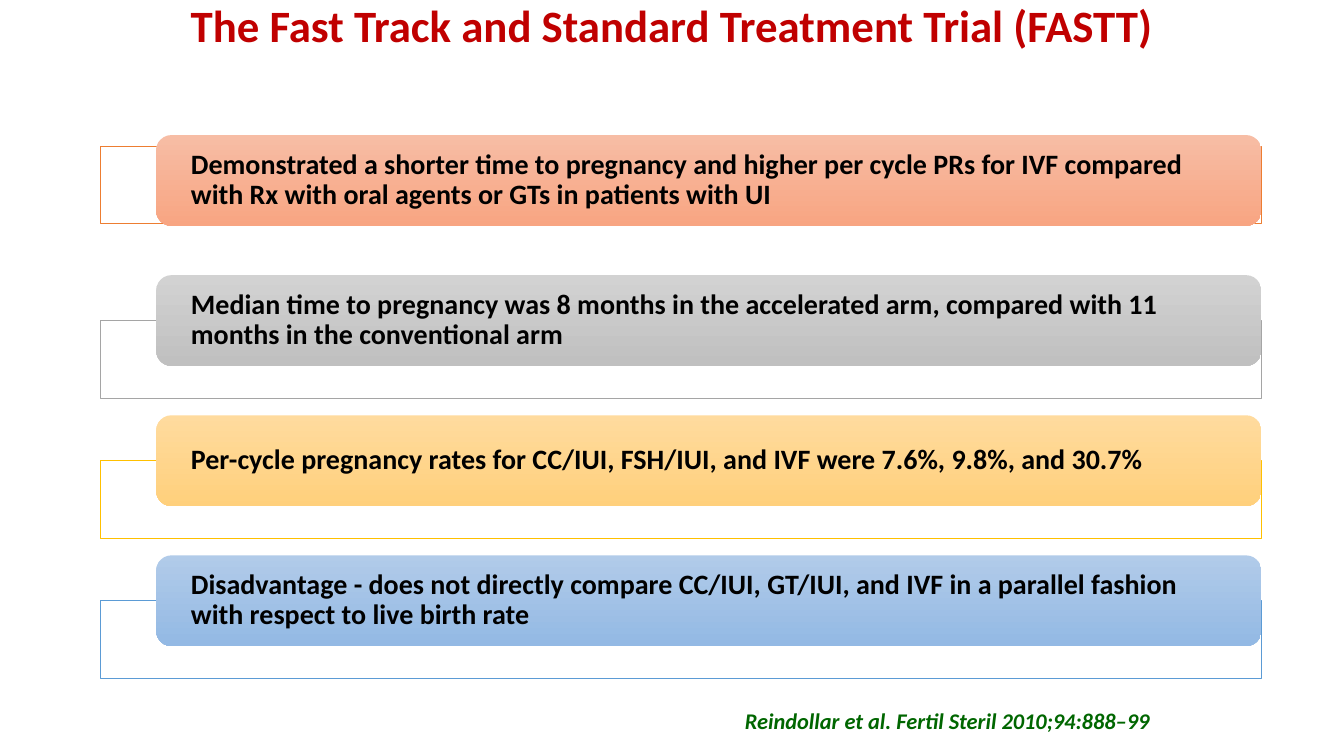
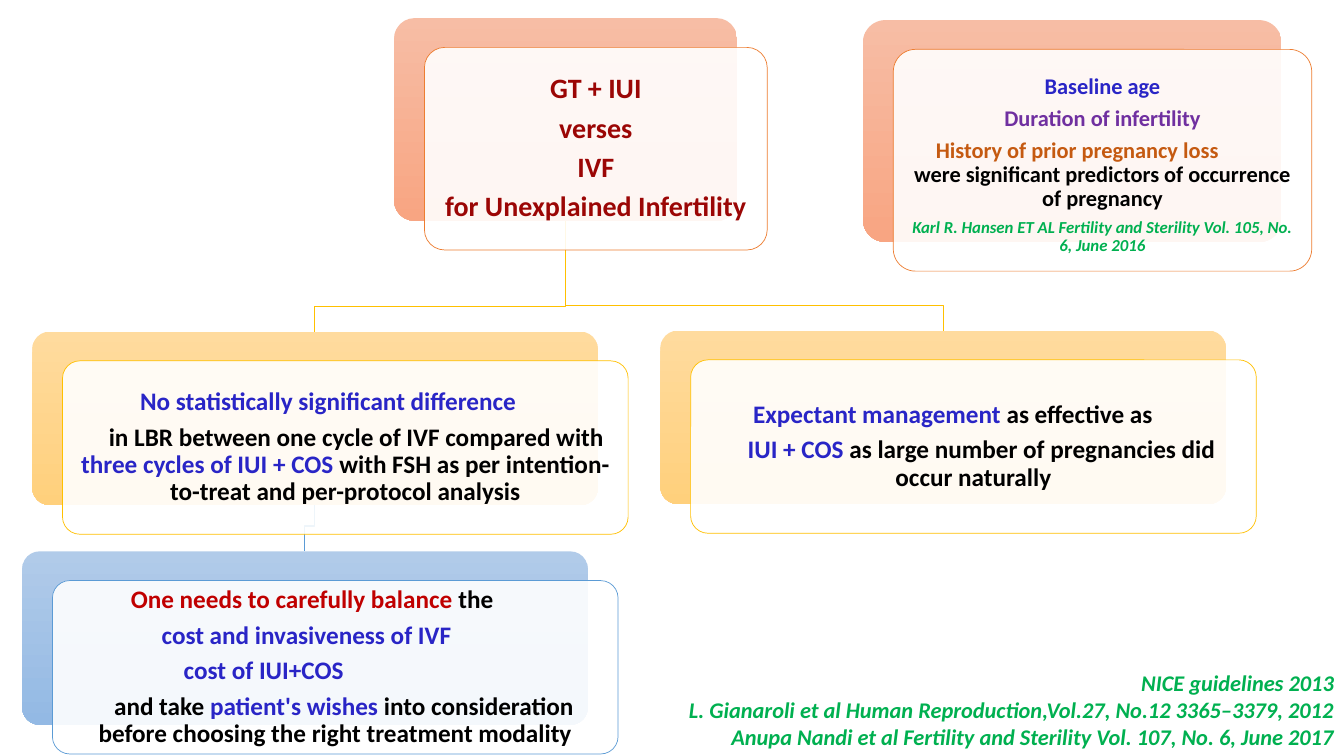
from lxml import etree
from pptx import Presentation
from pptx.dml.color import RGBColor
from pptx.enum.shapes import MSO_SHAPE
from pptx.enum.text import MSO_ANCHOR, PP_ALIGN
from pptx.oxml.ns import qn
from pptx.util import Inches, Pt

LEFT, CENTER, RIGHT = PP_ALIGN.LEFT, PP_ALIGN.CENTER, PP_ALIGN.RIGHT
MIDDLE = MSO_ANCHOR.MIDDLE
RECT, ROUNDED = MSO_SHAPE.RECTANGLE, MSO_SHAPE.ROUNDED_RECTANGLE

FONT = "Calibri"
BLACK = RGBColor(0x00, 0x00, 0x00)
WHITE = RGBColor(0xFF, 0xFF, 0xFF)
RED = RGBColor(0xC0, 0x00, 0x00)
DARK_RED = RGBColor(0x9B, 0x06, 0x05)
BLUE = RGBColor(0x29, 0x25, 0xC6)
PURPLE = RGBColor(0x70, 0x30, 0xA0)
BROWN = RGBColor(0xC5, 0x5A, 0x11)
GREEN = RGBColor(0x00, 0xB0, 0x50)
DARK_GREEN = RGBColor(0x00, 0x66, 0x00)

# Each theme: outline, gradient top, gradient bottom
ORANGE_THEME = (RGBColor(0xED, 0x7D, 0x31), RGBColor(0xF7, 0xBD, 0xA5), RGBColor(0xF8, 0xA5, 0x82))
GRAY_THEME = (RGBColor(0xA5, 0xA5, 0xA5), RGBColor(0xD2, 0xD2, 0xD2), RGBColor(0xC0, 0xC0, 0xC0))
GOLD_THEME = (RGBColor(0xFF, 0xC0, 0x00), RGBColor(0xFF, 0xDB, 0x9E), RGBColor(0xFF, 0xD0, 0x7C))
BLUE_THEME = (RGBColor(0x5B, 0x9B, 0xD5), RGBColor(0xB1, 0xCB, 0xE9), RGBColor(0x93, 0xB9, 0xE4))


def write(frame, *runs, size=18, align=CENTER, spacing=0.9, gap=0.33,
          italic=False, right=0, first=0):
    """Append a paragraph of (text, colour) runs; gap is a share of the size."""
    paragraph = frame.paragraphs[0]
    if paragraph.runs:
        paragraph = frame.add_paragraph()
        paragraph.space_before = Pt(round(size * gap, 1))
    paragraph.alignment = align
    paragraph.line_spacing = spacing
    properties = paragraph._p.get_or_add_pPr()
    properties.set("marR", str(Inches(right)))
    properties.set("indent", str(Inches(first)))
    for text, color in runs:
        run = paragraph.add_run()
        run.text = text
        run.font.name = FONT
        run.font.size = Pt(size)
        run.font.bold = True
        run.font.italic = italic
        run.font.color.rgb = color


def draw_panel(slide, kind, box, theme, filled):
    """Draw a gradient panel, or a nearly opaque white one with an outline."""
    panel = slide.shapes.add_shape(kind, *[Inches(length) for length in box])
    panel.shadow.inherit = False
    outline, top, bottom = theme
    if filled:
        panel.fill.gradient()
        panel.fill.gradient_angle = 270
        for stop, color in zip(panel.fill.gradient_stops, (top, bottom)):
            stop.color.rgb = color
        panel.line.fill.background()
    else:
        panel.fill.solid()
        panel.fill.fore_color.rgb = WHITE
        white = panel.element.spPr.find(qn("a:solidFill"))[0]
        etree.SubElement(white, qn("a:alpha"), val="90000")
        panel.line.color.rgb = outline
        panel.line.width = Pt(0.5)
    panel.text_frame.word_wrap = True
    panel.text_frame.vertical_anchor = MIDDLE
    return panel


deck = Presentation()
deck.slide_width, deck.slide_height = Inches(13.33), Inches(7.5)

# Slide 1: trial findings
findings_slide = deck.slides.add_slide(deck.slide_layouts[5])
title = findings_slide.shapes.title
title.left, title.top, title.width, title.height = Inches(0), Inches(0), Inches(13.33), Inches(0.56)
title.text_frame.vertical_anchor = MIDDLE
write(title.text_frame, ("The Fast Track and Standard Treatment Trial (FASTT)", RED), size=32)

findings = [
    (ORANGE_THEME, "Demonstrated a shorter time to pregnancy and higher per cycle PRs for IVF "
                   "compared with Rx with oral agents or GTs in patients with UI"),
    (GRAY_THEME, "Median time to pregnancy was 8 months in the accelerated arm, compared with 11 "
                 "months in the conventional arm"),
    (GOLD_THEME, "Per-cycle pregnancy rates for CC/IUI, FSH/IUI, and IVF were 7.6%, 9.8%, and 30.7%"),
    (BLUE_THEME, "Disadvantage - does not directly compare CC/IUI, GT/IUI, and IVF in a parallel "
                 "fashion with respect to live birth rate"),
]
for index, (theme, finding) in enumerate(findings):
    bar_top = 1.34 + 1.39 * index
    frame_drop = 0.45 if index else 0.11
    draw_panel(findings_slide, RECT, (1, bar_top + frame_drop, 11.51, 0.77), theme, False)
    bar = draw_panel(findings_slide, ROUNDED, (1.55, bar_top, 10.96, 0.9), theme, True)
    bar_text = bar.text_frame
    bar_text.margin_left = bar_text.margin_right = Inches(0.3)
    bar_text.margin_top = bar_text.margin_bottom = 0
    write(bar_text, (finding, BLACK), size=20, align=LEFT)

citation = findings_slide.shapes.add_textbox(Inches(7.29), Inches(6.97), Inches(6), Inches(0.37))
citation.text_frame.word_wrap = True
write(citation.text_frame, ("Reindollar et al. Fertil Steril 2010;94:888–99", DARK_GREEN),
      size=16, align=LEFT, spacing=1, italic=True)

# Slide 2: comparison of treatments
comparison_slide = deck.slides.add_slide(deck.slide_layouts[6])

# Branches turn a quarter inch above the card they reach
branches = [
    ((5.61, 2.19), (9.36, 3.28), GOLD_THEME),
    ((3.12, 5.01), (3.02, 5.47), BLUE_THEME),
    ((5.61, 2.19), (3.12, 3.29), GOLD_THEME),
]
for (start_x, start_y), (end_x, end_y), theme in branches:
    turn_y = end_y - 0.25
    outline = comparison_slide.shapes.build_freeform(Inches(start_x), Inches(start_y))
    corners = [(start_x, turn_y), (end_x, turn_y), (end_x, end_y)]
    outline.add_line_segments([(Inches(x), Inches(y)) for x, y in corners], close=False)
    branch = outline.convert_to_shape()
    branch.shadow.inherit = False
    branch.fill.background()
    branch.line.color.rgb = theme[0]
    branch.line.width = Pt(1)

# Each card: back panel box, theme, top margin, paragraphs as (runs, format)
cards = [
    ((3.91, 0.18, 3.4, 2.01), ORANGE_THEME, 0.07, [
        ([(line, DARK_RED)], {"size": 20})
        for line in ("GT + IUI", "verses", "IVF", "for Unexplained Infertility")
    ]),
    ((0.32, 3.29, 5.61, 1.72), GOLD_THEME, 0.07, [
        ([("No statistically significant difference", BLUE)], {"right": 0.34}),
        ([("in LBR between one cycle of IVF compared with ", BLACK),
          ("three cycles of IUI + COS ", BLUE),
          ("with FSH as per intention-to-treat and per-protocol analysis", BLACK)], {"first": 0.22}),
    ]),
    ((0.22, 5.47, 5.61, 1.72), BLUE_THEME, 0.07, [
        ([("One needs to carefully balance ", RED), ("the", BLACK)], {"right": 0.46}),
        ([("cost and invasiveness of IVF", BLUE)], {"right": 0.57}),
        ([("cost of IUI+COS", BLUE)], {"right": 1.42}),
        ([("and take ", BLACK), ("patient's wishes ", BLUE),
          ("into consideration before choosing the right treatment modality", BLACK)],
         {"first": 0.17}),
    ]),
    ((6.55, 3.28, 5.61, 1.72), GOLD_THEME, 0.07, [
        ([("Expectant management ", BLUE), ("as effective as", BLACK)], {"right": 0.41}),
        ([("IUI + COS ", BLUE), ("as large number of pregnancies did occur naturally", BLACK)],
         {"first": 0.16}),
    ]),
    ((8.56, 0.2, 4.15, 2.2), ORANGE_THEME, 0.17, [
        ([("Baseline age", BLUE)], {"size": 16}),
        ([("Duration of infertility", PURPLE)], {"size": 16}),
        ([("History of prior pregnancy loss", BROWN)], {"size": 16, "right": 0.5}),
        ([("were significant predictors of occurrence of pregnancy", BLACK)],
         {"size": 16, "gap": 0}),
        ([("Karl R. Hansen ET AL Fertility and Sterility Vol. 105, No. 6, June 2016", GREEN)],
         {"size": 12, "gap": 0.44, "italic": True}),
    ]),
]
for (left, top, width, height), theme, top_margin, paragraphs in cards:
    back = draw_panel(comparison_slide, ROUNDED, (left, top, width, height), theme, True)
    front = draw_panel(comparison_slide, ROUNDED, (left + 0.3, top + 0.29, width, height), theme, False)
    for panel in (back, front):
        panel.adjustments[0] = 0.1
    card_text = front.text_frame
    card_text.margin_left = card_text.margin_right = card_text.margin_bottom = Inches(0.07)
    card_text.margin_top = Inches(top_margin)
    for runs, text_format in paragraphs:
        write(card_text, *runs, **text_format)

# References
references = comparison_slide.shapes.add_textbox(Inches(6.32), Inches(6.59), Inches(7.01), Inches(0.91))
references.text_frame.word_wrap = True
for reference in (
    "NICE guidelines 2013",
    "L. Gianaroli et al Human Reproduction,Vol.27, No.12 3365–3379, 2012",
    "Anupa Nandi et al Fertility and Sterility Vol. 107, No. 6, June 2017",
):
    write(references.text_frame, (reference, GREEN), size=16, align=RIGHT, spacing=1, gap=0, italic=True)

deck.save("out.pptx")
